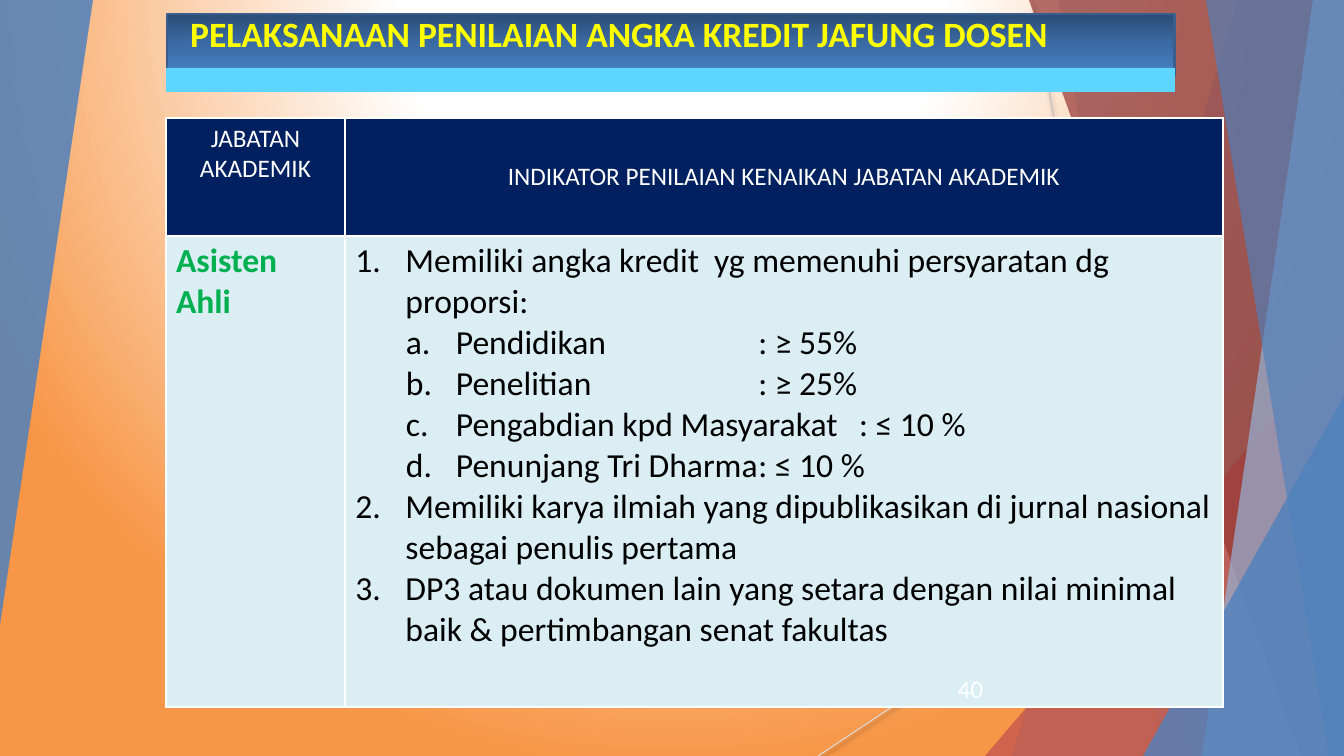
from lxml.etree import SubElement
from pptx import Presentation
from pptx.dml.color import RGBColor as RGB
from pptx.enum.shapes import MSO_CONNECTOR as CONN, MSO_SHAPE as SHAPE
from pptx.enum.text import MSO_ANCHOR as ANCHOR, MSO_AUTO_SIZE as AUTO, PP_ALIGN as ALIGN
from pptx.oxml import parse_xml
from pptx.oxml.ns import nsdecls, qn
from pptx.util import Emu, Pt

PX = 914400 / 100.8
W, H = 1344, 756
FONT = "Calibri"
C = {"white": "FFFFFF", "black": "000000", "orange": "F79646", "blue": "4F81BD",
     "red": "C0504D", "maroon": "953735", "pale": "95B3D7", "cyan": "5DD5FF",
     "edge": "3A5F8C", "yellow": "FFFF00", "navy": "002060", "ice": "DBEEF4",
     "green": "00B050", "grey": "BFBFBF", "light": "D9D9D9",
     "bar1": "2A4C75", "bar2": "3C6CA6", "bar3": "4780C5"}


def px(n):
    return Emu(round(n * PX))


def color(name):
    return RGB.from_string(C[name])


class Deck:
    def __init__(self):
        self.prs = Presentation()
        self.prs.slide_width, self.prs.slide_height = px(W), px(H)
        self.s = self.prs.slides.add_slide(self.prs.slide_layouts[5])
        self.shapes = self.s.shapes

    def gradient(self, parent, stops, shade):
        gs = "".join(f'<a:gs pos="{pos * 1000}"><a:srgbClr val="{C[name]}"/></a:gs>'
                     for pos, name in stops)
        grad = parse_xml(f'<a:gradFill {nsdecls("a")} rotWithShape="1">'
                         f'<a:gsLst>{gs}</a:gsLst>{shade}</a:gradFill>')
        solid = parent.find(qn("a:solidFill"))
        parent.replace(solid, grad)

    def background(self, stops, shade):
        self.s.background.fill.solid()
        self.gradient(self.s._element.cSld.bg.bgPr, stops, shade)

    def paint(self, sp, fill, alpha=100):
        sp.shadow.inherit = False
        sp.line.fill.background()
        sp.fill.solid()
        sp.fill.fore_color.rgb = color(fill)
        if alpha < 100:
            clr = sp._element.spPr.find(qn("a:solidFill"))[0]
            SubElement(clr, qn("a:alpha"), val=str(alpha * 1000))
        return sp

    def preset(self, kind, box, fill, alpha=100):
        return self.paint(self.shapes.add_shape(kind, *map(px, box)), fill, alpha)

    def triangle(self, box, fill, alpha, rotation=0):
        sp = self.preset(SHAPE.ISOSCELES_TRIANGLE, box, fill, alpha)
        sp.adjustments[0] = 1
        sp.rotation = rotation

    def facet(self, top, bottom, fill, alpha):
        """Full-height band from a slanted left edge to the slide's right edge."""
        fb = self.shapes.build_freeform(top, 0, scale=PX)
        fb.add_line_segments([(W, 0), (W, H), (bottom, H)], close=True)
        self.paint(fb.convert_to_shape(), fill, alpha)

    def line(self, ends, name):
        cn = self.shapes.add_connector(CONN.STRAIGHT, *map(px, ends))
        cn.line.color.rgb = color(name)
        cn.line.width = Pt(0.75)
        cn._element.spPr.append(parse_xml(
            f'<a:effectLst {nsdecls("a")}><a:outerShdw blurRad="{Pt(3.1)}" dist="{Pt(1.6)}" '
            'dir="5400000"><a:srgbClr val="000000"><a:alpha val="38000"/></a:srgbClr>'
            '</a:outerShdw></a:effectLst>'))

    def style(self, p, size, name, bold=False, align=ALIGN.LEFT):
        p.alignment = align
        for r in p.runs:
            r.font.name, r.font.size, r.font.bold = FONT, Pt(size), bold
            r.font.color.rgb = color(name)

    def title(self, text, box):
        sp = self.shapes.title
        sp.left, sp.top, sp.width, sp.height = map(px, box)
        tf = sp.text_frame
        tf.text = text
        tf.auto_size, tf.vertical_anchor = AUTO.NONE, ANCHOR.MIDDLE
        self.style(tf.paragraphs[0], 25.4, "yellow", True)
        self.shapes._spTree.append(sp._element)  # bring in front of the bar

    def text(self, text, box, size, name, align):
        tf = self.shapes.add_textbox(*map(px, box)).text_frame
        tf.word_wrap, tf.vertical_anchor = True, ANCHOR.MIDDLE
        tf.text = text
        self.style(tf.paragraphs[0], size, name, align=align)

    def table(self, x, y, cols, rows):
        box = (x, y, sum(cols), sum(rows))
        tb = self.shapes.add_table(len(rows), len(cols), *map(px, box)).table
        tb.horz_banding = False
        for col, w in zip(tb.columns, cols):
            col.width = px(w)
        for row, h in zip(tb.rows, rows):
            row.height = px(h)
        return tb

    def cell(self, cell, lines, fill, size, name, bold=False, align=ALIGN.LEFT):
        cell.fill.solid()
        cell.fill.fore_color.rgb = color(fill)
        for i, side in enumerate("LRTB"):
            cell._tc.tcPr.insert(i, parse_xml(
                f'<a:ln{side} {nsdecls("a")} w="{Pt(1)}"><a:solidFill>'
                f'<a:srgbClr val="{C["white"]}"/></a:solidFill></a:ln{side}>'))
        tf = cell.text_frame
        tf.text = "\n".join(lines)
        for p in tf.paragraphs:
            self.style(p, size, name, bold, align)

    def number(self, p, level, scheme, start):
        pPr = p._p.get_or_add_pPr()
        pPr.set("marL", str(px(50.4 * level)))
        pPr.set("indent", str(-px(50)))
        pPr.set("defTabSz", str(px(100.8)))
        SubElement(pPr, qn("a:buFont"), typeface="+mj-lt")
        bu = SubElement(pPr, qn("a:buAutoNum"), type=scheme)
        if start > 1:
            bu.set("startAt", str(start))


def main():
    d = Deck()

    # Background and angled facets
    d.background([(0, "white"), (35, "white"), (100, "orange")],
                 '<a:path path="circle"><a:fillToRect l="50000" t="-80000" '
                 'r="50000" b="180000"/></a:path>')
    d.line((1033, 0, 1167, H), "grey")
    d.line((W, 406, 818, H), "light")
    d.facet(1238, 1012, "blue", 30)
    d.facet(1058, 1191, "blue", 20)
    d.triangle((985, 336, 359, 420), "red", 72)
    d.facet(1029, 1301, "maroon", 70)
    d.facet(1313, 1202, "pale", 70)
    d.facet(1206, 1329, "blue", 65)
    d.triangle((1143, 396, 201, 360), "blue", 80)
    d.triangle((0, 0, 93, 625), "blue", 85, rotation=180)

    # Title bar
    bar = d.preset(SHAPE.RECTANGLE, (167, 14, 1008, 62), "bar2")
    d.gradient(bar._element.spPr, [(0, "bar1"), (50, "bar2"), (100, "bar3")],
               '<a:lin ang="5400000" scaled="0"/>')
    bar.line.color.rgb = color("edge")
    bar.line.width = Pt(2)
    d.preset(SHAPE.RECTANGLE, (166, 68, 1009, 24), "cyan")
    d.title("PELAKSANAAN PENILAIAN ANGKA KREDIT JAFUNG DOSEN", (180, -3, 1030, 73))

    # Indicator table
    tb = d.table(166, 118, (179, 878), (118, 471))
    heads = ("JABATAN AKADEMIK", "INDIKATOR PENILAIAN KENAIKAN JABATAN AKADEMIK")
    for i, head in enumerate(heads):
        d.cell(tb.cell(0, i), [head], "navy", 18, "white", align=ALIGN.CENTER)
    tb.cell(0, 1).vertical_anchor = ANCHOR.MIDDLE
    d.cell(tb.cell(1, 0), ["Asisten Ahli"], "ice", 24, "green", bold=True)

    main_item, sub_item = (1, "arabicPeriod"), (2, "alphaLcPeriod")
    items = [
        ("Memiliki angka kredit  yg memenuhi persyaratan dg proporsi:", *main_item, 1),
        ("Pendidikan \t\t: ≥ 55%", *sub_item, 1),
        ("Penelitian \t\t: ≥ 25%", *sub_item, 1),
        ("Pengabdian kpd Masyarakat \t: ≤ 10 %", *sub_item, 1),
        ("Penunjang Tri Dharma\t: ≤ 10 %", *sub_item, 1),
        ("Memiliki karya ilmiah yang dipublikasikan di jurnal nasional sebagai penulis pertama",
         *main_item, 2),
        ("DP3 atau dokumen lain yang setara dengan nilai minimal baik & pertimbangan senat "
         "fakultas", *main_item, 2),
    ]
    indicators = tb.cell(1, 1)
    d.cell(indicators, [item[0] for item in items], "ice", 24, "black")
    for p, (_, level, scheme, start) in zip(indicators.text_frame.paragraphs, items):
        d.number(p, level, scheme, start)

    # Slide number
    d.text("40", (893, 668, 100, 40), 18, "white", ALIGN.RIGHT)

    d.prs.save("out.pptx")


if __name__ == "__main__":
    main()
